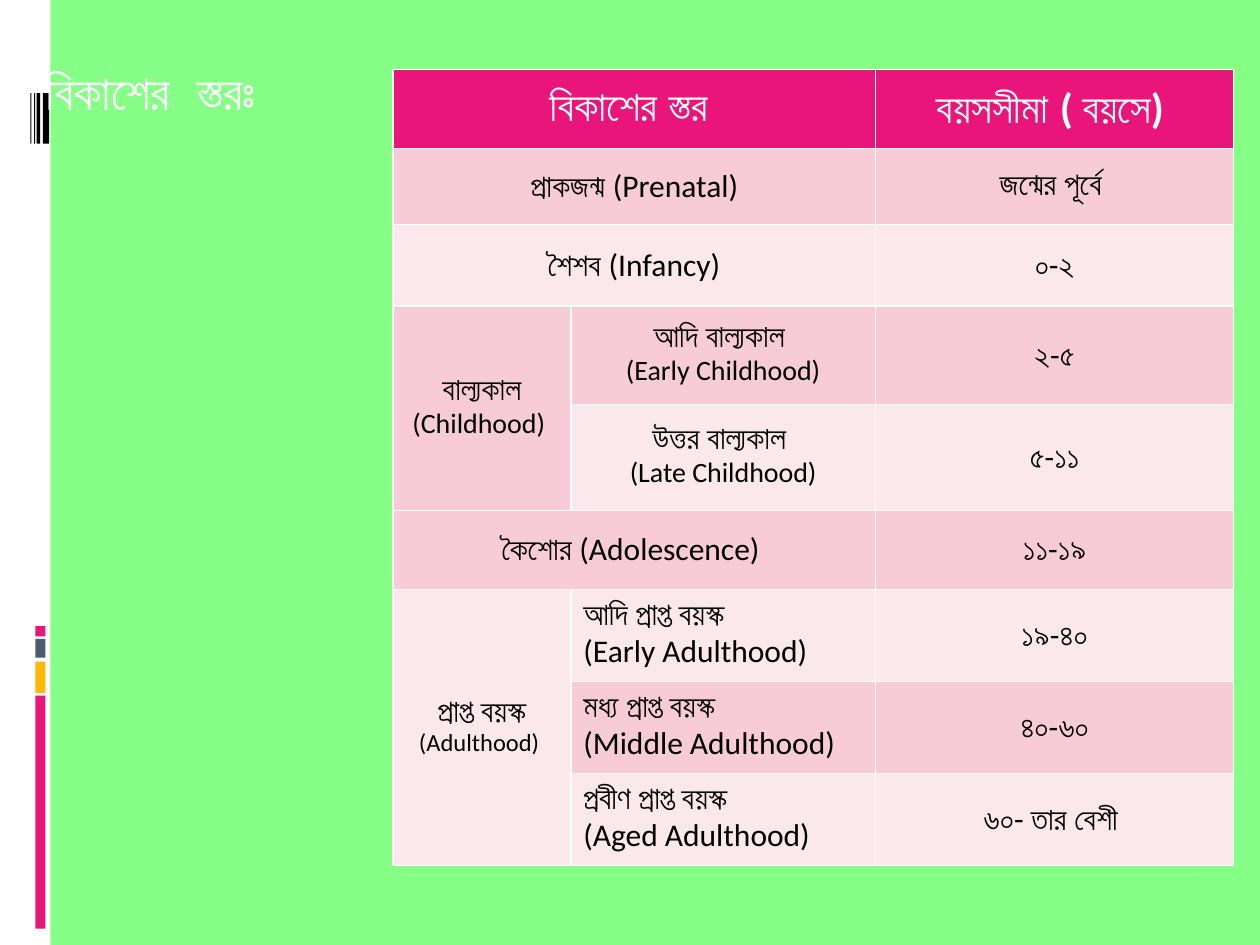
import pptx
import pptx.dml.color
import pptx.enum.shapes
import pptx.enum.text
import pptx.oxml
import pptx.oxml.ns
import pptx.util

RGBColor = pptx.dml.color.RGBColor
WHITE = RGBColor(0xFF, 0xFF, 0xFF)
BLACK = RGBColor(0x00, 0x00, 0x00)
GREEN = RGBColor(0x85, 0xFF, 0x85)
PINK = RGBColor(0xEA, 0x15, 0x7A)
AMBER = RGBColor(0xFE, 0xB8, 0x0A)
SLATE = RGBColor(0x4E, 0x5B, 0x6F)
ROSE = RGBColor(0xF7, 0xCC, 0xD7)
BLUSH = RGBColor(0xFB, 0xE8, 0xEC)

presentation = pptx.Presentation()
presentation.slide_width = pptx.util.Inches(10)
presentation.slide_height = pptx.util.Inches(7.5)
slide = presentation.slides.add_slide(presentation.slide_layouts[6])
slide.background.fill.solid()
slide.background.fill.fore_color.rgb = GREEN

GRID_COLUMNS = 1000
unit = presentation.slide_width // GRID_COLUMNS


def add_block(left, top, width, height, color):
    shape = slide.shapes.add_shape(
        pptx.enum.shapes.MSO_SHAPE.RECTANGLE,
        left * unit, top * unit, width * unit, height * unit)
    shape.shadow.inherit = False
    shape.fill.solid()
    shape.fill.fore_color.rgb = color
    shape.line.fill.background()


def add_borders(cell):
    properties = cell._tc.get_or_add_tcPr()
    for position, side in enumerate(("lnL", "lnR", "lnT", "lnB")):
        properties.insert(position, pptx.oxml.parse_xml(
            f'<a:{side} {pptx.oxml.ns.nsdecls("a")} w="{pptx.util.Pt(1)}">'
            f'<a:solidFill><a:srgbClr val="{WHITE}"/></a:solidFill></a:{side}>'))


add_block(0, 0, 40, 750, WHITE)
for left, width in ((34, 5), (29, 3), (27, 1), (24, 1)):
    add_block(left, 74, width, 40, BLACK)
for top, height, color in ((552, 185, PINK), (525, 25, AMBER),
                           (507, 15, SLATE), (497, 8, PINK)):
    add_block(28, top, 8, height, color)

title = slide.shapes.add_textbox(26 * unit, 44 * unit, 302 * unit, 57 * unit)
title.text_frame.word_wrap = True
title.text_frame.auto_size = pptx.enum.text.MSO_AUTO_SIZE.SHAPE_TO_FIT_TEXT
paragraph = title.text_frame.paragraphs[0]
paragraph.text = "বিকাশের  স্তরঃ"
paragraph.font.name = "Lato"
paragraph.font.size = pptx.util.Pt(28)
paragraph.font.bold = True
paragraph.font.color.rgb = WHITE

column_widths = (141, 242, 284)
row_heights = (63, 60, 65, 78, 84, 63, 73, 73, 73)
stages = (
    ("বিকাশের স্তর ", "", "বয়সসীমা ( বয়সে) "),
    ("প্রাকজন্ম (Prenatal)", "", "জন্মের পূর্বে "),
    ("শৈশব (Infancy)", "", "০-২"),
    ("বাল্যকাল\n(Childhood) ", "আদি বাল্যকাল \n(Early Childhood)", "২-৫"),
    ("", "উত্তর বাল্যকাল \n(Late Childhood)", "৫-১১"),
    ("কৈশোর (Adolescence) ", "", "১১-১৯"),
    ("প্রাপ্ত বয়স্ক\n(Adulthood) ", "আদি প্রাপ্ত বয়স্ক\n(Early Adulthood)", "১৯-৪০"),
    ("", "মধ্য প্রাপ্ত বয়স্ক\n(Middle Adulthood)", "৪০-৬০"),
    ("", "প্রবীণ প্রাপ্ত বয়স্ক\n(Aged Adulthood)", "৬০- তার বেশী "),
)
ADULT_ROW = 6

table = slide.shapes.add_table(
    len(stages), len(column_widths), 312 * unit, 55 * unit,
    sum(column_widths) * unit, sum(row_heights) * unit).table
for column, width in zip(table.columns, column_widths):
    column.width = width * unit
for row, height in zip(table.rows, row_heights):
    row.height = height * unit

for row_index, texts in enumerate(stages):
    header = row_index == 0
    for column_index, text in enumerate(texts):
        cell = table.cell(row_index, column_index)
        cell.fill.solid()
        cell.fill.fore_color.rgb = PINK if header else ROSE if row_index % 2 else BLUSH
        cell.vertical_anchor = pptx.enum.text.MSO_ANCHOR.MIDDLE
        add_borders(cell)
        if not text:
            continue
        cell.text = text
        adult_stage = row_index >= ADULT_ROW and column_index == 1
        if adult_stage:
            second_size = 18
        else:
            second_size = 14 if row_index == ADULT_ROW else 16
        sizes = (24 if header else 18, second_size)
        for paragraph, size in zip(cell.text_frame.paragraphs, sizes):
            if not adult_stage:
                paragraph.alignment = pptx.enum.text.PP_ALIGN.CENTER
            paragraph.font.name = "Calibri"
            paragraph.font.size = pptx.util.Pt(size)
            paragraph.font.bold = header
            paragraph.font.color.rgb = WHITE if header else BLACK

for row_index in (0, 1, 2, 5):
    table.cell(row_index, 0).merge(table.cell(row_index, 1))
table.cell(3, 0).merge(table.cell(4, 0))
table.cell(ADULT_ROW, 0).merge(table.cell(ADULT_ROW + 2, 0))

presentation.save("out.pptx")
